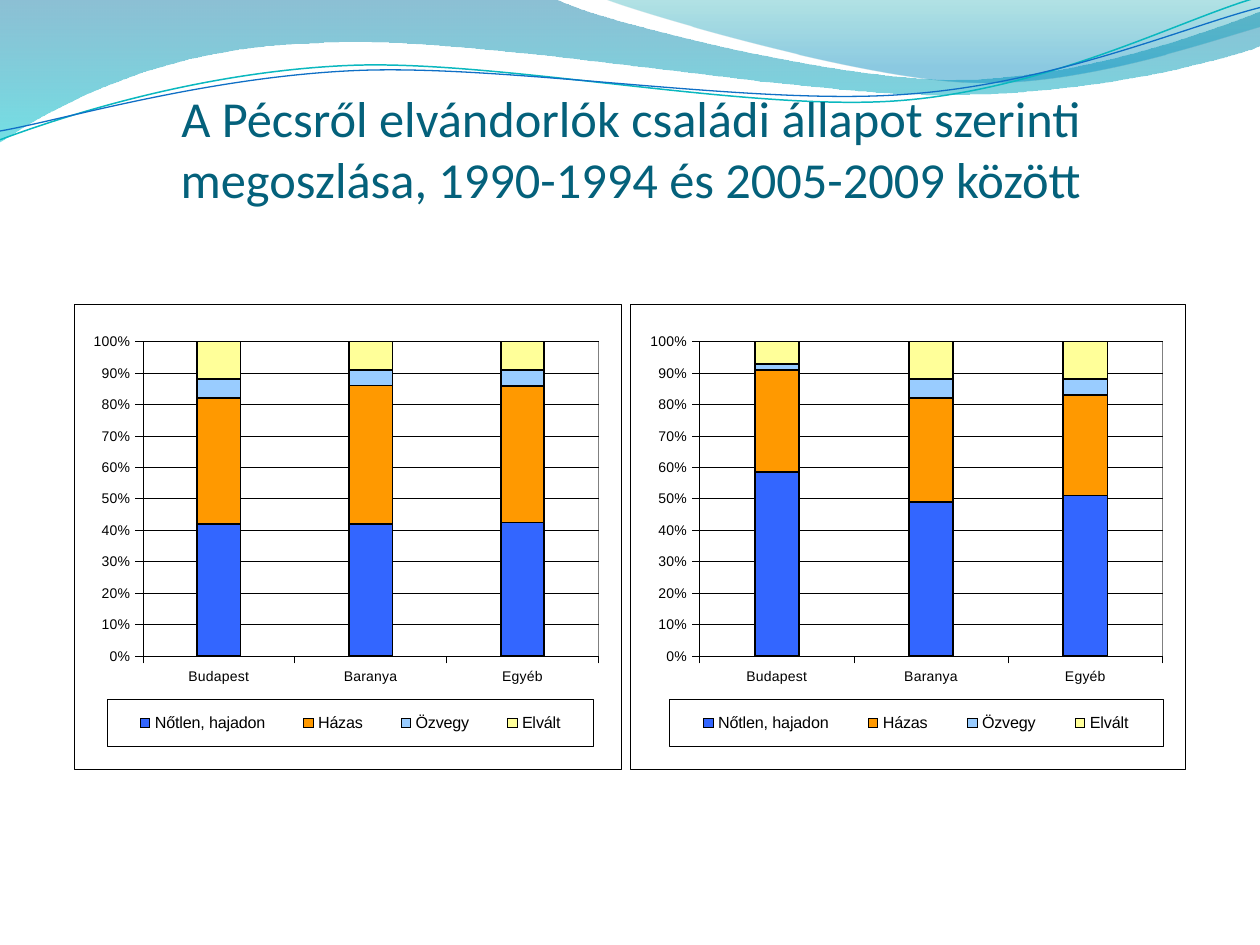
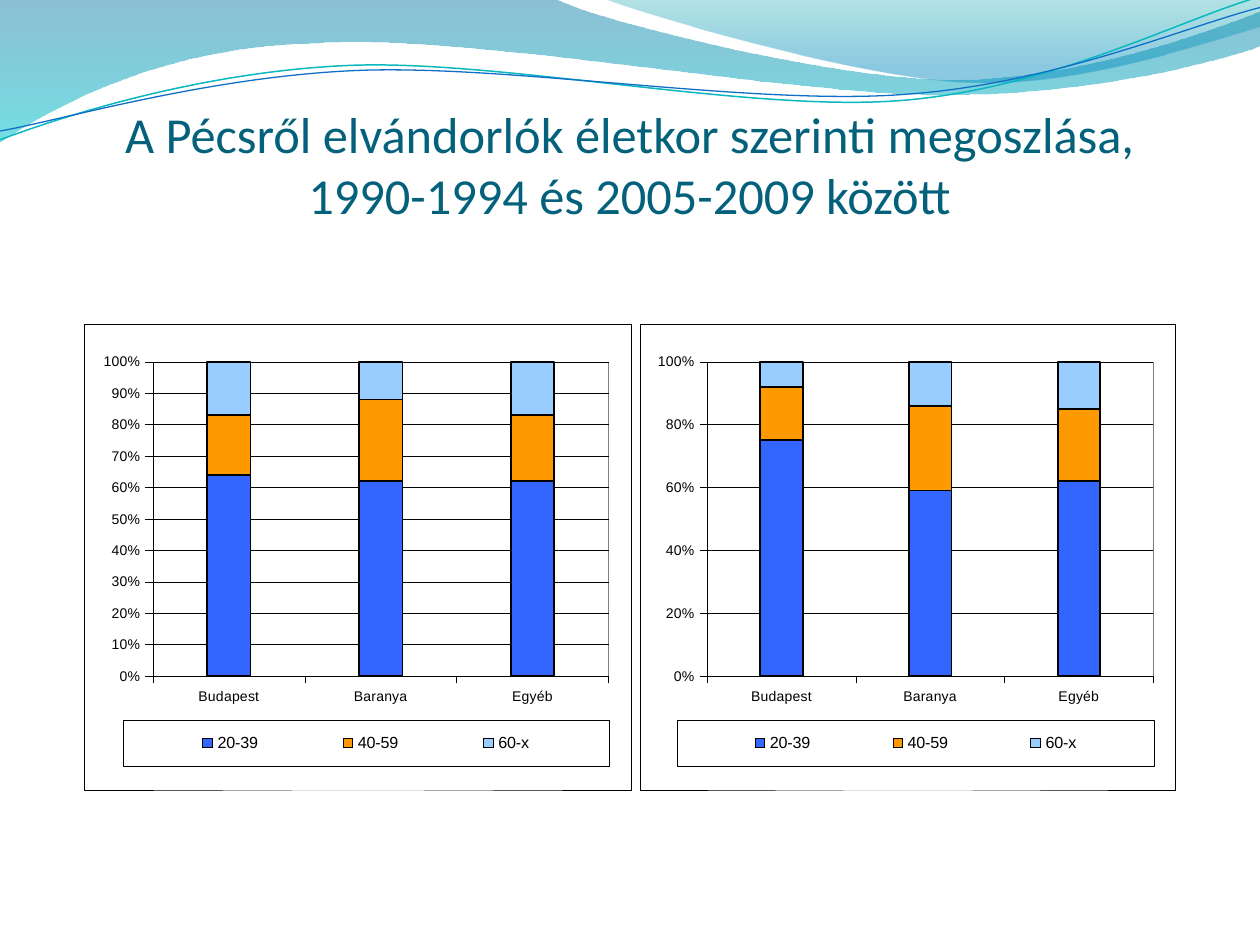
from lxml import etree
from pptx import Presentation
from pptx.chart.data import CategoryChartData
from pptx.dml.color import RGBColor
from pptx.enum.chart import XL_CHART_TYPE, XL_LEGEND_POSITION, XL_TICK_MARK
from pptx.enum.text import MSO_ANCHOR, PP_ALIGN
from pptx.oxml import parse_xml
from pptx.oxml.ns import qn
from pptx.util import Inches, Pt

COLOURS = {
    "title": "04617B", "ink": "000000", "paper": "FFFFFF", "plot_edge": "808080",
    "blue": "3366FF", "orange": "FF9900", "sky": "99CCFF", "yellow": "FFFF99",
    "teal_line": "0AB8BF", "blue_line": "0F6FC6",
    "wave_top": "0074A1", "wave_foot": "00C6CF",
    "crest_top": "00A1A9", "crest_foot": "008BBF",
}
SERIES_COLOURS = ["blue", "orange", "sky", "yellow"]
DRAWING_NS = "http://schemas.openxmlformats.org/drawingml/2006/main"
CHART_NS = "http://schemas.openxmlformats.org/drawingml/2006/chart"

# Content: box is left, top, width, height in inches
PLACES = ["Budapest", "Baranya", "Egyéb"]
MARITAL = ["Nőtlen, hajadon", "Házas", "Özvegy", "Elvált"]
AGES = ["20-39", "40-59", "60-x"]
PAGES = [
    {
        "title": "A Pécsről elvándorlók családi állapot szerinti megoszlása, "
                 "1990-1994 és 2005-2009 között",
        "title_box": (0.51, 0.76, 9, 0.78), "anchor": MSO_ANCHOR.MIDDLE,
        "groups": MARITAL,
        "charts": [
            {"box": (0.59, 2.41, 4.34, 3.7), "step": 0.1, "legend_left": 0.06,
             "values": [(42, 42, 42), (40, 44, 43), (6, 5, 5), (12, 9, 9)]},
            {"box": (5, 2.41, 4.41, 3.7), "step": 0.1, "legend_left": 0.07,
             "values": [(58, 49, 51), (32, 33, 32), (2, 6, 5), (7, 12, 12)]},
        ],
    },
    {
        "title": "A Pécsről elvándorlók életkor szerinti megoszlása, "
                 "1990-1994 és 2005-2009 között",
        "title_box": (0.5, 0.77, 9, 1.01), "anchor": MSO_ANCHOR.BOTTOM,
        "groups": AGES,
        "charts": [
            {"box": (0.67, 2.57, 4.34, 3.7), "step": 0.1, "legend_left": 0.07,
             "values": [(64, 62, 62), (19, 26, 21), (17, 12, 17)]},
            {"box": (5.08, 2.57, 4.25, 3.7), "step": 0.2, "legend_left": 0.07,
             "values": [(75, 59, 62), (17, 27, 23), (8, 14, 15)]},
        ],
    },
]

# Waves: a pair is a straight step, six numbers are a cubic curve.
# Gradient stops are position, colour, opacity in percent.
BANDS = [
    {"outline": [(0, 0), (4.4, -0.01), (4.76, 0.17, 6.64, 0.63, 7.58, 0.63),
                 (8.53, 0.63, 9.58, 0.26, 10, 0.09), (10.01, 0.36),
                 (9.83, 0.44, 8.7, 0.76, 7.46, 0.75), (6.22, 0.75, 3.82, 0.28, 2.57, 0.34),
                 (1.29, 0.36, 0.46, 0.83, -0.01, 1.13), (0, 0)],
     "stops": [(0, "wave_top", 45), (100, "wave_foot", 55)]},
    {"outline": [(4.79, -0.01), (5.09, 0.11, 6.82, 0.62, 7.69, 0.65),
                 (8.56, 0.69, 9.61, 0.32, 10, 0.21), (10, 0), (4.79, -0.01)],
     "stops": [(0, "crest_top", 30), (80, "crest_foot", 45)]},
]
STRANDS = [
    {"outline": [(0, 1.11), (0.48, 0.93, 1.58, 0.57, 2.77, 0.52),
                 (3.95, 0.47, 5.93, 0.89, 7.13, 0.8), (8.33, 0.71, 9.38, 0.15, 9.98, -0.02)],
     "colour": "teal_line", "width": 0.85},
    {"outline": [(0, 1.04), (0.47, 0.96, 1.64, 0.61, 2.83, 0.56),
                 (4.03, 0.51, 5.97, 0.84, 7.17, 0.75), (8.36, 0.67, 9.41, 0.21, 10, 0.06)],
     "colour": "blue_line", "width": 0.75},
]


def rgb(name):
    return RGBColor.from_string(COLOURS[name])


def add_outline(page, outline, close):
    """Join the end points by a freeform, then bend its curved steps."""
    ends = [tuple(map(Inches, part[-2:])) for part in outline]
    builder = page.shapes.build_freeform(*ends[0], scale=1.0)
    builder.add_line_segments(ends[1:], close=close)
    shape = builder.convert_to_shape()
    shape.shadow.inherit = False
    shape.fill.background()
    steps = list(shape._element.iter(qn("a:lnTo")))
    for part, step in zip(outline[1:], steps):
        if len(part) == 6:
            curve = etree.Element(qn("a:cubicBezTo"))
            for x, y in zip(part[::2], part[1::2]):
                point = etree.SubElement(curve, qn("a:pt"))
                point.set("x", str(Inches(x) - shape.left))
                point.set("y", str(Inches(y) - shape.top))
            step.getparent().replace(step, curve)
    return shape


def add_waves(page):
    for band in BANDS:
        shape = add_outline(page, band["outline"], True)
        shape.line.fill.background()
        stops = "".join(
            f'<a:gs pos="{position * 1000}"><a:srgbClr val="{COLOURS[colour]}">'
            f'<a:alpha val="{opacity * 1000}"/></a:srgbClr></a:gs>'
            for position, colour, opacity in band["stops"])
        gradient = parse_xml(f'<a:gradFill xmlns:a="{DRAWING_NS}"><a:gsLst>{stops}</a:gsLst>'
                             '<a:lin ang="5400000" scaled="0"/></a:gradFill>')
        properties = shape._element.spPr
        properties.replace(properties.find(qn("a:noFill")), gradient)
    for strand in STRANDS:
        shape = add_outline(page, strand["outline"], False)
        shape.line.color.rgb = rgb(strand["colour"])
        shape.line.width = Pt(strand["width"])


def add_title(page, text, box, anchor):
    frame = page.shapes.add_textbox(*map(Inches, box)).text_frame
    frame.word_wrap = True
    frame.vertical_anchor = anchor
    frame.margin_left = frame.margin_right = frame.margin_bottom = 0
    frame.margin_top = Inches(0.05)
    para = frame.paragraphs[0]
    para.alignment = PP_ALIGN.CENTER
    span = para.add_run()
    span.text = text
    span.font.name, span.font.size = "Calibri", Pt(28.8)
    span.font.color.rgb = rgb("title")


def panel(edge):
    """White chart background with a hairline edge."""
    return parse_xml(
        f'<c:spPr xmlns:c="{CHART_NS}" xmlns:a="{DRAWING_NS}">'
        f'<a:solidFill><a:srgbClr val="{COLOURS["paper"]}"/></a:solidFill>'
        f'<a:ln w="3175"><a:solidFill><a:srgbClr val="{COLOURS[edge]}"/></a:solidFill></a:ln>'
        '</c:spPr>')


def layout(x, y, w, h, inner=False):
    """Fixed place inside a chart, as shares of its size."""
    node = etree.Element(qn("c:layout"))
    manual = etree.SubElement(node, qn("c:manualLayout"))
    settings = [("layoutTarget", "inner")] if inner else []
    settings += [("xMode", "edge"), ("yMode", "edge"), ("x", x), ("y", y), ("w", w), ("h", h)]
    for tag, value in settings:
        etree.SubElement(manual, qn(f"c:{tag}")).set("val", str(value))
    return node


def style_font(font, size):
    font.name, font.size = "Arial", Pt(size)
    font.color.rgb = rgb("ink")


def style_line(line, width=0.25):
    line.color.rgb = rgb("ink")
    line.width = Pt(width)


def add_share_chart(page, groups, box, step, legend_left, values):
    data = CategoryChartData()
    data.categories = PLACES
    for group, shares in zip(groups, values):
        data.add_series(group, shares)
    chart = page.shapes.add_chart(XL_CHART_TYPE.COLUMN_STACKED_100,
                                  *map(Inches, box), data).chart
    chart.has_title = False
    style_font(chart.font, 8)

    # Columns
    plot = chart.plots[0]
    plot.gap_width, plot.overlap, plot.vary_by_categories = 250, 100, False
    for series, colour in zip(plot.series, SERIES_COLOURS):
        series.format.fill.solid()
        series.format.fill.fore_color.rgb = rgb(colour)
        style_line(series.format.line, 1)

    # Axes
    for axis in (chart.category_axis, chart.value_axis):
        axis.major_tick_mark = XL_TICK_MARK.OUTSIDE
        axis.minor_tick_mark = XL_TICK_MARK.NONE
        style_font(axis.tick_labels.font, 8)
        style_line(axis.format.line)
    scale = chart.value_axis
    scale.minimum_scale, scale.maximum_scale, scale.major_unit = 0, 1, step
    scale.tick_labels.number_format = "0%"
    scale.tick_labels.number_format_is_linked = False
    scale.has_major_gridlines = True
    style_line(scale.major_gridlines.format.line)

    # Legend
    chart.has_legend = True
    legend = chart.legend
    legend.position = XL_LEGEND_POSITION.BOTTOM
    legend.include_in_layout = False
    style_font(legend.font, 9.2)
    overlay = legend._element.find(qn("c:overlay"))
    for old in legend._element.findall(qn("c:layout")):
        legend._element.remove(old)
    overlay.addprevious(layout(legend_left, 0.85, 0.89, 0.1))
    overlay.addnext(panel("ink"))

    # Plot area and frame
    area = chart._chartSpace.chart.plotArea
    for old in area.findall(qn("c:layout")):
        area.remove(old)
    area.insert(0, layout(0.125, 0.081, 0.834, 0.675, inner=True))
    area.append(panel("plot_edge"))
    chart._chartSpace.chart.addnext(panel("ink"))


def main():
    deck = Presentation()
    deck.slide_width, deck.slide_height = Inches(10), Inches(7.5)
    for content in PAGES:
        page = deck.slides.add_slide(deck.slide_layouts[6])
        add_waves(page)
        add_title(page, content["title"], content["title_box"], content["anchor"])
        for chart in content["charts"]:
            add_share_chart(page, content["groups"], **chart)
    deck.save("out.pptx")


if __name__ == "__main__":
    main()
